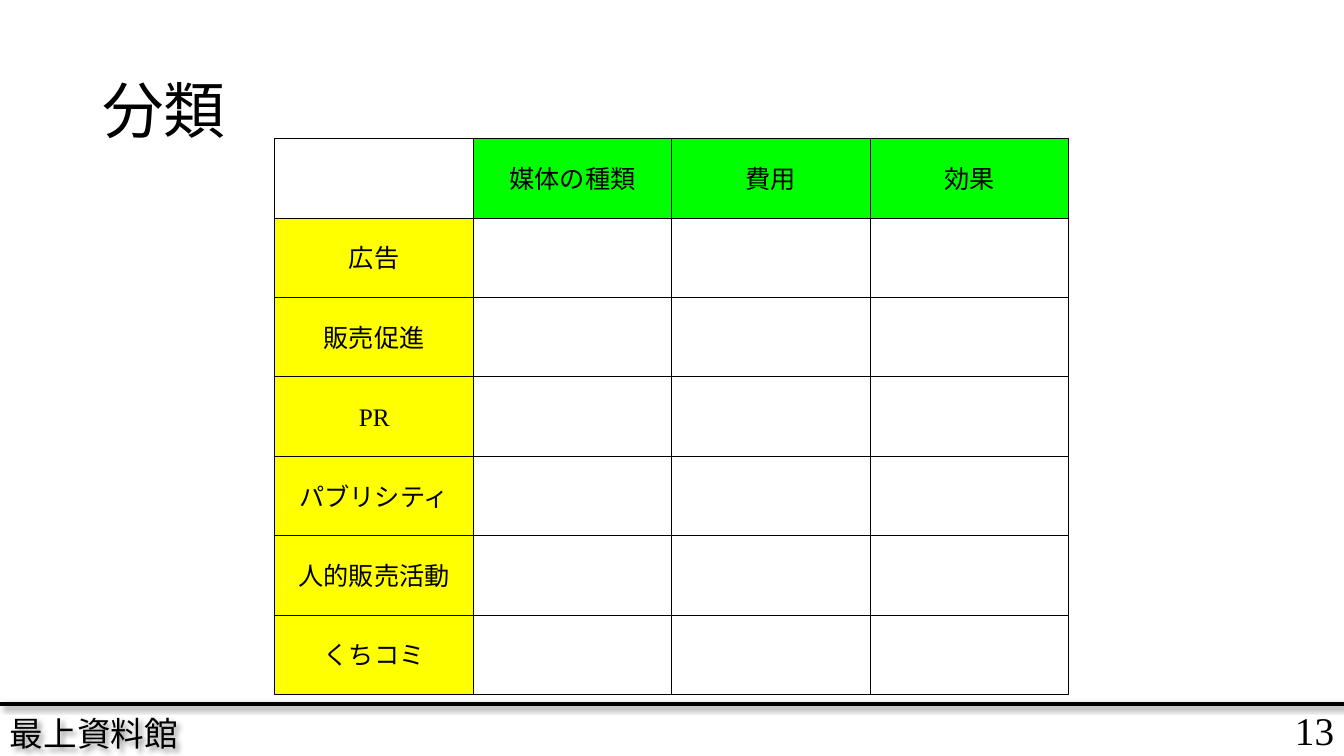
"""Build the classification slide: an empty comparison grid with a footer."""
import pptx
import pptx.util
import pptx.dml.color
import pptx.enum.dml
import pptx.enum.lang
import pptx.enum.shapes
import pptx.enum.text
import pptx.oxml
import pptx.oxml.ns
import lxml.etree
from dataclasses import dataclass

Cm, Pt = pptx.util.Cm, pptx.util.Pt
Align = pptx.enum.text.PP_ALIGN

TITLE = "分類"
COLUMNS = ["媒体の種類", "費用", "効果"]
ROWS = ["広告", "販売促進", "PR", "パブリシティ", "人的販売活動", "くちコミ"]
FOOTER = "最上資料館"
PAGE = "13"


@dataclass(frozen=True)
class Theme:
    """Colours, fonts and type sizes."""
    ink: str = "000000"
    paper: str = "FFFFFF"
    column_head: str = "00FF00"
    row_head: str = "FFFF00"
    latin: str = "Times New Roman"
    cjk: str = "Noto Sans CJK JP"
    title: int = 44
    page: int = 28
    footer: int = 24
    cell: int = 18


THEME = Theme()
SLIDE_W, SLIDE_H = 33.87, 19.05
GRID_X, GRID_Y = 6.93, 3.5
CELL_W, CELL_H = 5, 2
RULE_Y = 17.73


def rgb(value):
    """Turn a hex string into a colour."""
    return pptx.dml.color.RGBColor.from_string(value)


def write(sp, text, size, align=Align.LEFT, font=THEME.latin, wrap=True):
    """Put one styled, vertically centred line into a shape."""
    tf = sp.text_frame
    tf.word_wrap = wrap
    tf.vertical_anchor = pptx.enum.text.MSO_ANCHOR.MIDDLE
    p = tf.paragraphs[0]
    p.text = text
    p.alignment = align
    p.font.size = Pt(size)
    p.font.name = font
    p.font.color.rgb = rgb(THEME.ink)
    p.font.language_id = pptx.enum.lang.MSO_LANGUAGE_ID.JAPANESE
    props = p._p.pPr.find(pptx.oxml.ns.qn("a:defRPr"))
    ea = lxml.etree.SubElement(props, pptx.oxml.ns.qn("a:ea"))
    ea.set("typeface", THEME.cjk)
    return p


def add_text(s, box, *args, **kwargs):
    """Add a text box at left, top, width, height in centimetres."""
    sp = s.shapes.add_textbox(*map(Cm, box))
    return sp, write(sp, *args, **kwargs)


def add_shadow(sp):
    """Give a shape a soft shadow to the lower right."""
    ns = pptx.oxml.ns.nsdecls("a")
    sp._element.spPr.append(pptx.oxml.parse_xml(
        f'<a:effectLst {ns}><a:outerShdw blurRad="{Pt(4)}" dist="{Pt(3)}" '
        f'dir="2700000" algn="tl" rotWithShape="0"><a:srgbClr val="{THEME.ink}">'
        '<a:alpha val="40000"/></a:srgbClr></a:outerShdw></a:effectLst>'))


def add_cell(s, row, col, text="", fill=None):
    """Add one grid cell by its row and column."""
    sp = s.shapes.add_shape(
        pptx.enum.shapes.MSO_SHAPE.RECTANGLE,
        Cm(GRID_X + col * CELL_W), Cm(GRID_Y + row * CELL_H), Cm(CELL_W), Cm(CELL_H))
    sp.shadow.inherit = False
    sp.line.color.rgb = rgb(THEME.ink)
    sp.line.width = Pt(0.75)
    if fill:
        sp.fill.solid()
        sp.fill.fore_color.rgb = rgb(fill)
    else:
        sp.fill.background()
    if text:
        write(sp, text, THEME.cell, Align.CENTER, wrap=False)


def add_footer(s):
    """Add the page number, the footer name and the rule above them."""
    add_text(s, (29.34, RULE_Y, 4.53, 1.3), PAGE, THEME.page, Align.RIGHT)
    sp, _ = add_text(s, (0, 17.9, 9.15, 1.15), FOOTER, THEME.footer)
    add_shadow(sp)
    rule = s.shapes.add_connector(
        pptx.enum.shapes.MSO_CONNECTOR.STRAIGHT,
        Cm(0), Cm(RULE_Y), Cm(SLIDE_W), Cm(RULE_Y))
    rule.line.color.rgb = rgb(THEME.ink)
    rule.line.width = Pt(3)
    add_shadow(rule)


def add_grid(s):
    """Add the headed grid with its empty cells."""
    add_cell(s, 0, 0, fill=THEME.paper)
    for row, label in enumerate(ROWS, 1):
        add_cell(s, row, 0, label, THEME.row_head)
    for col, label in enumerate(COLUMNS, 1):
        add_cell(s, 0, col, label, THEME.column_head)
        for row in range(1, len(ROWS) + 1):
            add_cell(s, row, col)


def main():
    """Build and save the slide."""
    prs = pptx.Presentation()
    prs.slide_width, prs.slide_height = Cm(SLIDE_W), Cm(SLIDE_H)
    s = prs.slides.add_slide(prs.slide_layouts[6])
    add_footer(s)
    _, p = add_text(s, (2.33, 1.01, 29.21, 3.68), TITLE, THEME.title, font=THEME.cjk)
    p.line_spacing = 0.9
    add_grid(s)
    prs.save("out.pptx")


if __name__ == "__main__":
    main()
